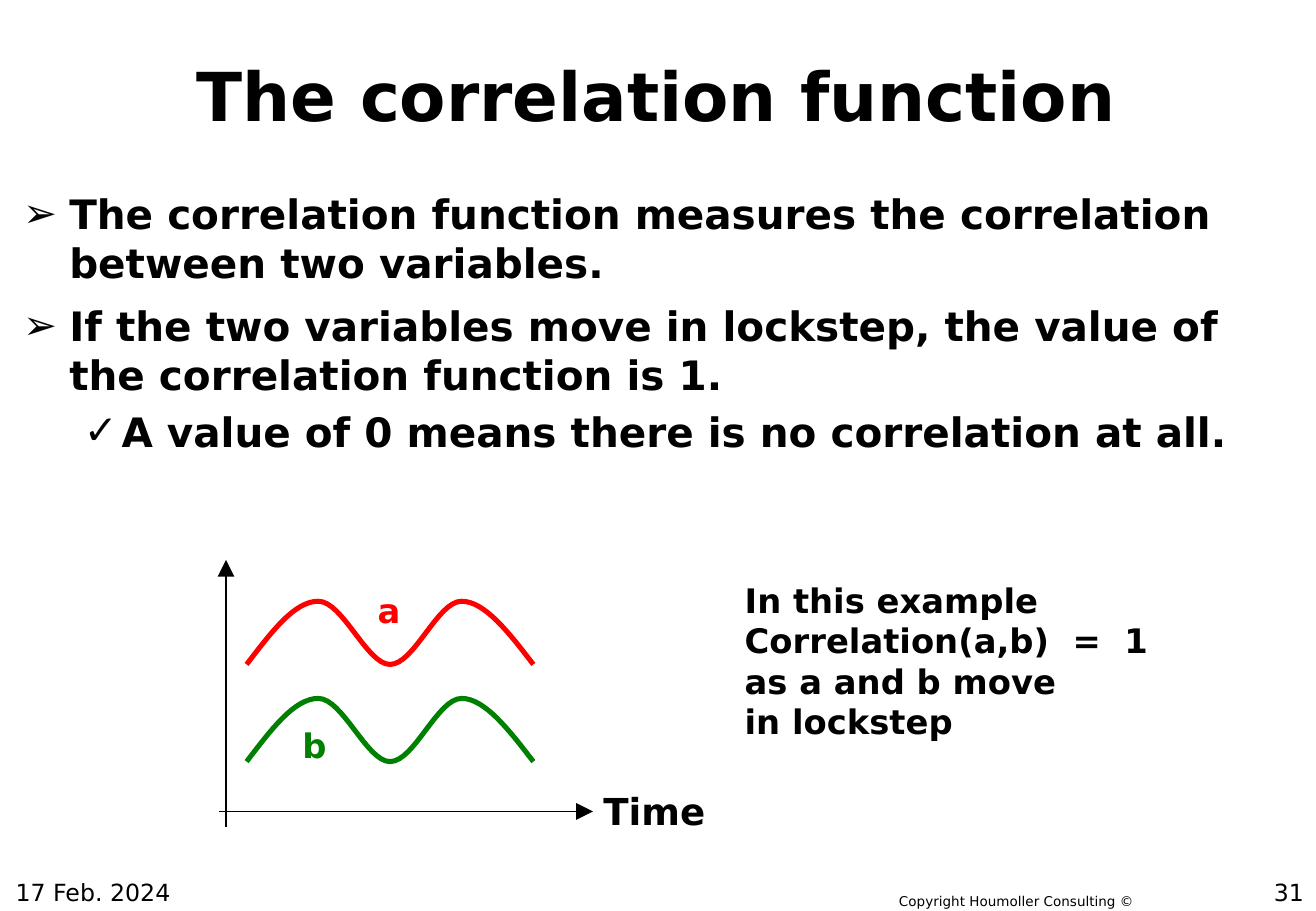
"""Build the slide that explains the correlation function."""
from lxml import etree
from pptx import Presentation
from pptx.dml.color import RGBColor
from pptx.enum.shapes import MSO_CONNECTOR
from pptx.enum.text import MSO_ANCHOR, MSO_AUTO_SIZE, PP_ALIGN
from pptx.oxml.ns import qn
from pptx.util import Pt

PX = 9144
FONT = "DejaVu Sans"
COLORS = {"text": "000000", "a": "FF0000", "b": "008000"}
LEFT, CENTER, RIGHT = PP_ALIGN.LEFT, PP_ALIGN.CENTER, PP_ALIGN.RIGHT
TOP, MIDDLE = MSO_ANCHOR.TOP, MSO_ANCHOR.MIDDLE
NO_FIT = MSO_AUTO_SIZE.NONE
STRAIGHT = MSO_CONNECTOR.STRAIGHT

BULLETS = [
    (0, "➢", 0, "The correlation function measures the correlation between two variables."),
    (0, "➢", 8.5, "If the two variables move in lockstep, the value of the correlation function is 1."),
    (1, "✓", 5, "A value of 0 means there is no correlation at all."),
]
INDENTS = [(38, -38), (81, -31)]
WAVE = [(0, 52), (20, 26), (39, 0), (59, 0), (79, 0), (99, 52), (118, 52),
        (138, 52), (157, 0), (177, 0), (196, 0), (216, 26), (236, 52)]


def rgb(name):
    """Return the named colour."""
    return RGBColor.from_string(COLORS[name])


def place(s, x, y, w, h):
    """Move and size a shape in px."""
    s.left, s.top, s.width, s.height = (v * PX for v in (x, y, w, h))


def style(p, size, bold=True, color="text", align=LEFT):
    """Format a paragraph and its runs."""
    p.alignment = align
    for r in p.runs:
        r.font.name = FONT
        r.font.size = Pt(size)
        r.font.bold = bold
        r.font.color.rgb = rgb(color)


def add_text(slide, box, text, size, bold=True, color="text", align=LEFT, anchor=TOP):
    """Add a text box with one paragraph per line of text."""
    tf = slide.shapes.add_textbox(*(v * PX for v in box)).text_frame
    tf.word_wrap = True
    tf.vertical_anchor = anchor
    tf.text = text
    for p in tf.paragraphs:
        style(p, size, bold, color, align)


def add_title(slide, text):
    """Fill the title placeholder."""
    s = slide.shapes.title
    place(s, 9, 15, 1062, 125)
    tf = s.text_frame
    tf.text = text
    tf.auto_size = NO_FIT
    tf.vertical_anchor = MIDDLE
    style(tf.paragraphs[0], 40, align=CENTER)


def add_bullets(slide, items):
    """Fill the body placeholder with a bulleted list."""
    s = slide.placeholders[1]
    place(s, 9, 151, 1066, 306)
    tf = s.text_frame
    tf.text = "\n".join(item[3] for item in items)
    tf.auto_size = NO_FIT
    tf.vertical_anchor = TOP
    for p, (level, mark, gap, _) in zip(tf.paragraphs, items):
        p.level = level
        pPr = p._p.get_or_add_pPr()
        margin, indent = INDENTS[level]
        pPr.set("marL", str(margin * PX))
        pPr.set("indent", str(indent * PX))
        etree.SubElement(pPr, qn("a:buFont"), typeface=FONT)
        etree.SubElement(pPr, qn("a:buChar"), char=mark)
        p.space_before = Pt(gap)
        style(p, 24)


def bezier(points, steps=16):
    """Return points along a chain of cubic curves."""
    curve = [points[0]]
    for i in range(0, len(points) - 1, 3):
        for k in range(1, steps + 1):
            t = k / steps
            weights = ((1 - t) ** 3, 3 * t * (1 - t) ** 2, 3 * t * t * (1 - t), t ** 3)
            curve.append(tuple(sum(w * pt[axis] for w, pt in zip(weights, points[i:i + 4]))
                               for axis in (0, 1)))
    return curve


def add_wave(slide, x, y, color):
    """Draw one wave with its top left corner at x, y."""
    points = [((x + dx) * PX, (y + dy) * PX) for dx, dy in bezier(WAVE)]
    builder = slide.shapes.build_freeform(*points[0])
    builder.add_line_segments(points[1:], close=False)
    s = builder.convert_to_shape()
    s.shadow.inherit = False
    s.fill.background()
    s.line.color.rgb = rgb(color)
    s.line.width = Pt(3)


def add_axis(slide, x1, y1, x2, y2):
    """Draw an axis with an arrowhead at its end."""
    s = slide.shapes.add_connector(STRAIGHT, *(v * PX for v in (x1, y1, x2, y2)))
    s.line.color.rgb = rgb("text")
    s.line.width = Pt(0.75)
    etree.SubElement(s.line._get_or_add_ln(), qn("a:tailEnd"), type="triangle", w="lg", len="lg")
    etree.SubElement(s._element.spPr, qn("a:effectLst"))


def main():
    """Build and save the slide."""
    prs = Presentation()
    prs.slide_width, prs.slide_height = 1083 * PX, 750 * PX
    slide = prs.slides.add_slide(prs.slide_layouts[1])
    add_title(slide, "The correlation function")
    add_bullets(slide, BULLETS)
    add_wave(slide, 203, 495, "a")
    add_text(slide, (301, 481, 39, 43), "a", 20, color="a")
    add_wave(slide, 203, 575, "b")
    add_text(slide, (239, 592, 40, 43), "b", 20, color="b")
    add_axis(slide, 186, 681, 186, 461)
    add_axis(slide, 180, 668, 488, 668)
    add_text(slide, (486, 644, 105, 47), "Time", 22, align=CENTER)
    add_text(slide, (603, 472, 355, 143),
             "In this example\nCorrelation(a,b)  =  1\nas a and b move\nin lockstep", 20)
    add_text(slide, (3, 718, 226, 32), "17 Feb. 2024", 14, bold=False, anchor=MIDDLE)
    add_text(slide, (730, 730, 216, 20), "Copyright Houmoller Consulting ©", 8, bold=False)
    add_text(slide, (857, 718, 226, 32), "31", 14, bold=False, align=RIGHT, anchor=MIDDLE)
    prs.save("out.pptx")


if __name__ == "__main__":
    main()
